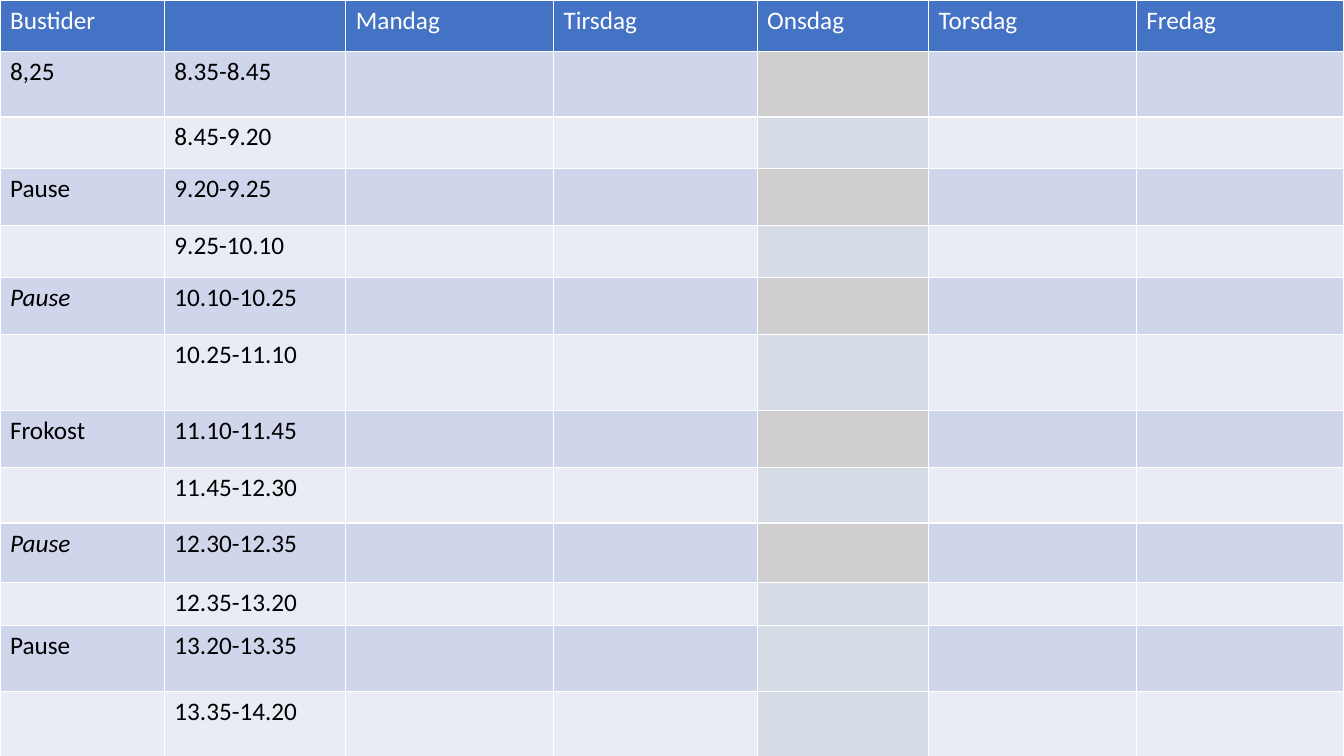
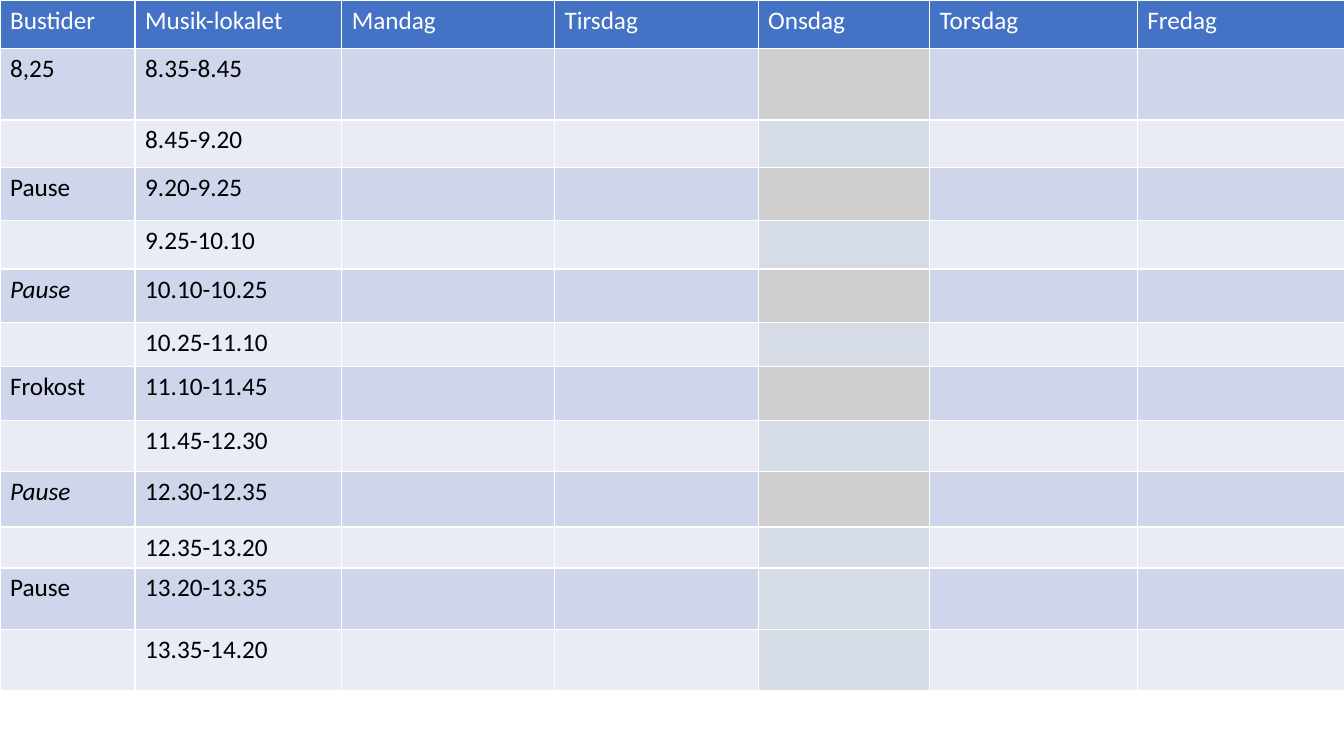
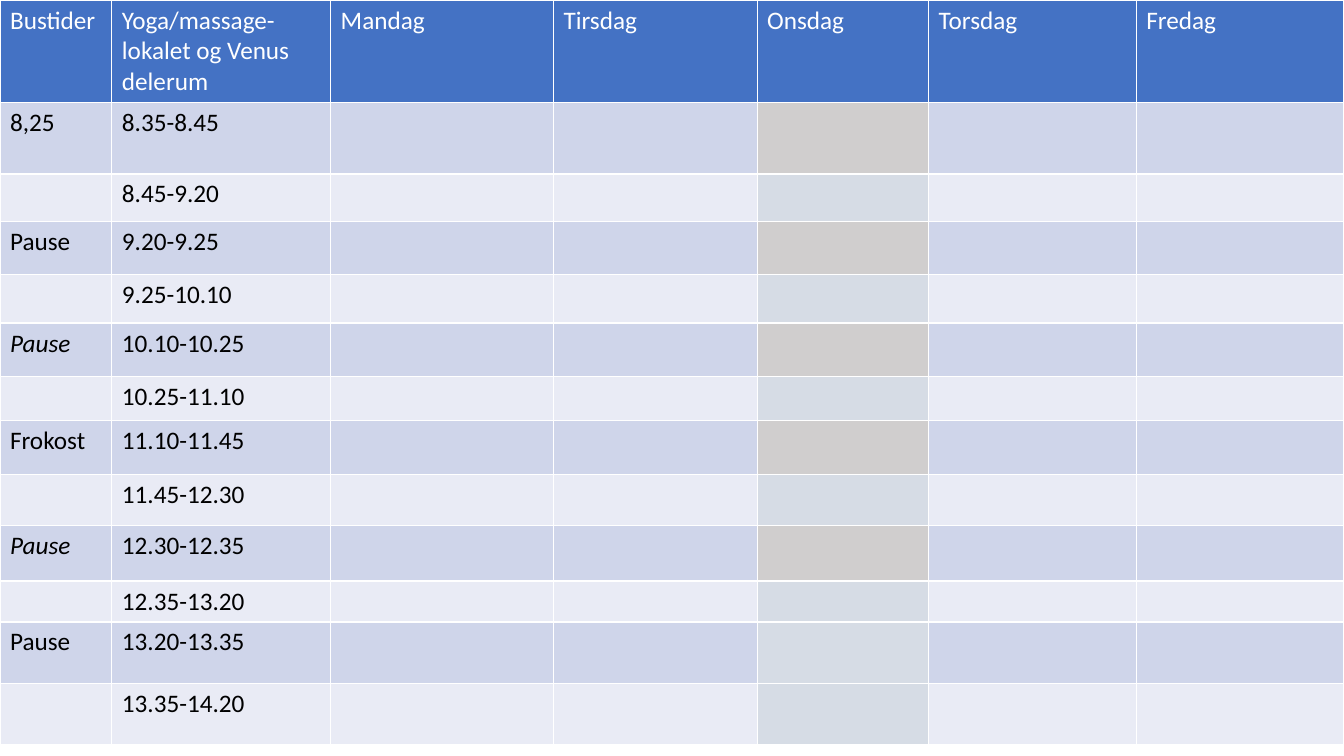
from pptx import Presentation
from pptx.dml.color import RGBColor
from pptx.util import Inches, Pt

FONT = "Calibri"
SIZE = Pt(18)
WHITE = RGBColor(0xFF, 0xFF, 0xFF)
BLACK = RGBColor(0x00, 0x00, 0x00)
HEADER_BLUE = RGBColor(0x44, 0x72, 0xC4)
BAND_DARK = RGBColor(0xCF, 0xD5, 0xEA)
BAND_LIGHT = RGBColor(0xE9, 0xEB, 0xF5)
WEDNESDAY_GREY = RGBColor(0xD0, 0xCE, 0xCE)
WEDNESDAY_BLUE = RGBColor(0xD6, 0xDC, 0xE5)

DAYS = ["Mandag", "Tirsdag", "Onsdag", "Torsdag", "Fredag"]
WEDNESDAY_COL = 4
# Label, time slot, italic label
LESSONS = [
    ("8,25", "8.35-8.45", False),
    ("", "8.45-9.20", False),
    ("Pause", "9.20-9.25", False),
    ("", "9.25-10.10", False),
    ("Pause", "10.10-10.25", True),
    ("", "10.25-11.10", False),
    ("Frokost", "11.10-11.45", False),
    ("", "11.45-12.30", False),
    ("Pause", "12.30-12.35", True),
    ("", "12.35-13.20", False),
    ("Pause", "13.20-13.35", False),
    ("", "13.35-14.20", False),
]
LAST_BREAK_ROW = 11

LAST_COLS = [2.02, 1.7, 2.06, 2.06]
TALL_ROWS = [0.51, 0.65, 0.51, 0.57, 0.51, 0.57, 0.75, 0.57, 0.55, 0.59, 0.43, 0.65, 0.65]
ROOM_ROWS = [0.48, 0.71, 0.47, 0.53, 0.48, 0.53, 0.44, 0.53, 0.51, 0.55, 0.38, 0.61, 0.61]
# Room, widths of the first three columns, row heights
TIMETABLES = [
    ("", [1.63, 1.8, 2.06], TALL_ROWS),
    ("Musik-lokalet", [1.34, 2.05, 2.11], ROOM_ROWS),
    ("Yoga/massage-lokalet og Venus delerum", [1.11, 2.17, 2.21], ROOM_ROWS),
]


def cell_color(row, col):
    if row == 0:
        return HEADER_BLUE
    dark = row % 2 == 1
    if col == WEDNESDAY_COL:
        return WEDNESDAY_GREY if dark and row != LAST_BREAK_ROW else WEDNESDAY_BLUE
    return BAND_DARK if dark else BAND_LIGHT


def fill_cell(cell, text, fill, color, italic=False):
    cell.fill.solid()
    cell.fill.fore_color.rgb = fill
    if not text:
        return
    cell.text_frame.text = text
    font = cell.text_frame.paragraphs[0].runs[0].font
    font.name = FONT
    font.size = SIZE
    font.color.rgb = color
    if italic:
        font.italic = True


def add_timetable(s, left, top, room, widths, heights):
    frame = s.shapes.add_table(len(heights), len(widths), Inches(left), Inches(top),
                               Inches(sum(widths)), Inches(sum(heights)))
    table = frame.table
    for column, width in zip(table.columns, widths):
        column.width = Inches(width)
    for row, height in zip(table.rows, heights):
        row.height = Inches(height)

    texts = [["Bustider", room] + DAYS]
    texts += [[label, slot] + [""] * len(DAYS) for label, slot, _ in LESSONS]
    for r, row_texts in enumerate(texts):
        for c, text in enumerate(row_texts):
            italic = r > 0 and c == 0 and LESSONS[r - 1][2]
            fill_cell(table.cell(r, c), text, cell_color(r, c),
                      BLACK if r else WHITE, italic)


def main():
    prs = Presentation()
    prs.slide_width = Inches(13.33)
    prs.slide_height = Inches(7.5)
    for room, first_cols, heights in TIMETABLES:
        s = prs.slides.add_slide(prs.slide_layouts[6])
        add_timetable(s, 0, 0, room, first_cols + LAST_COLS, heights)
    prs.save("out.pptx")


if __name__ == "__main__":
    main()
